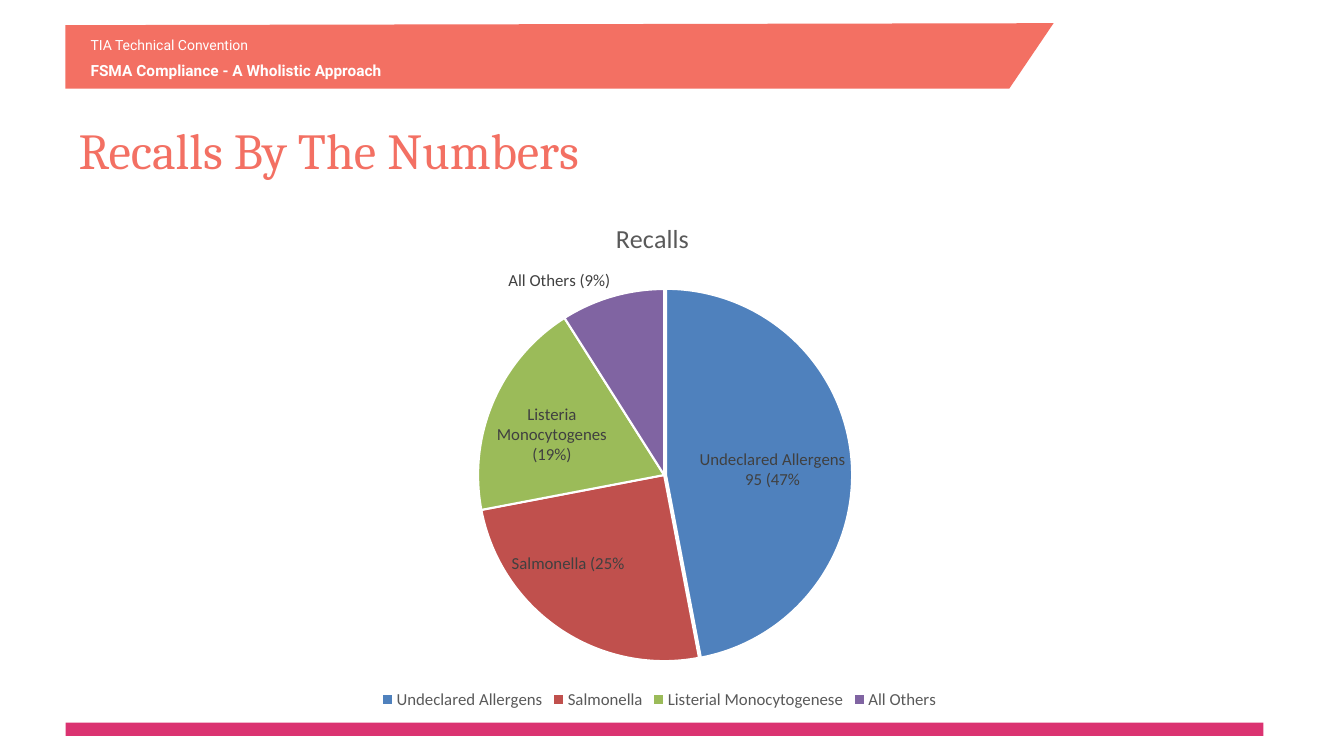
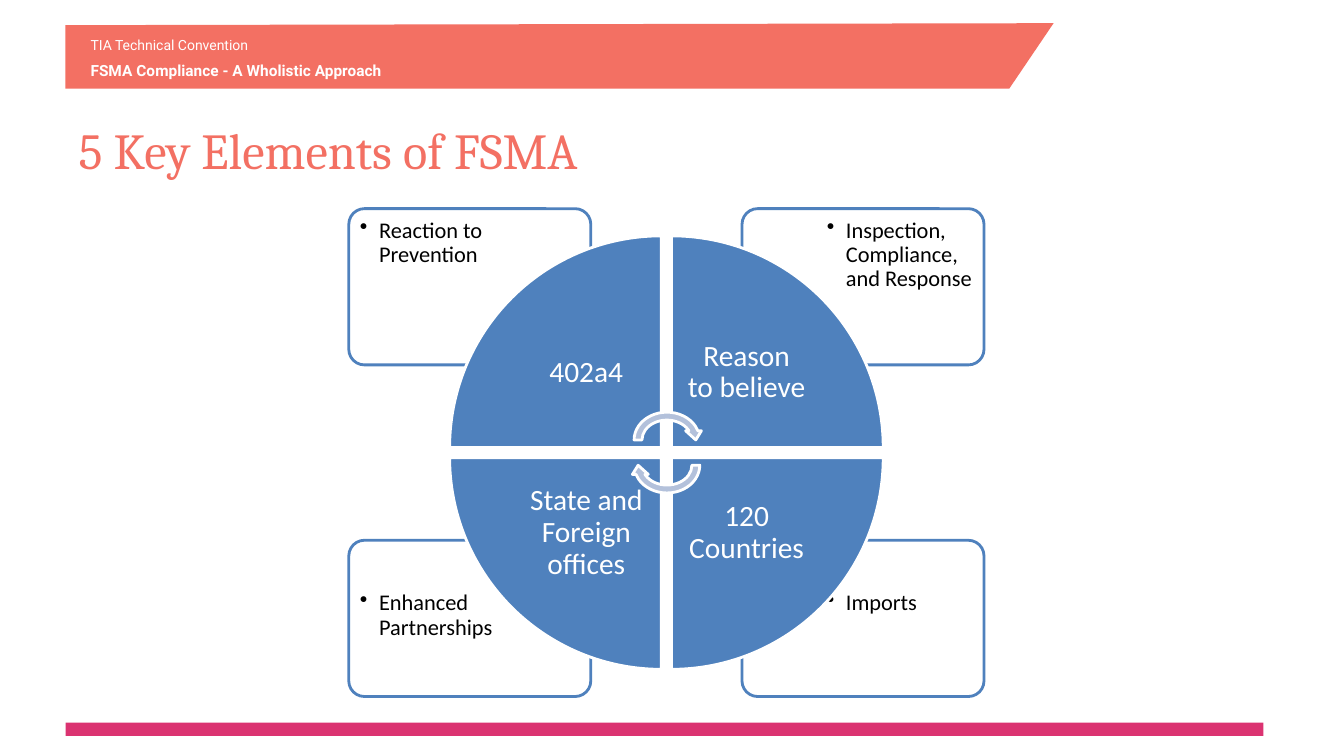
from lxml import etree
from pptx import Presentation
from pptx.chart.data import CategoryChartData
from pptx.dml.color import RGBColor
from pptx.enum.chart import XL_CHART_TYPE, XL_LABEL_POSITION, XL_LEGEND_POSITION
from pptx.enum.shapes import MSO_SHAPE
from pptx.enum.text import MSO_ANCHOR, PP_ALIGN
from pptx.oxml import parse_xml
from pptx.oxml.ns import nsdecls, qn
from pptx.util import Inches, Pt

COLORS = {
    "coral": "F37063", "magenta": "DB3371", "white": "FFFFFF", "black": "000000",
    "blue": "4F81BD", "red": "C0504D", "green": "9BBB59", "purple": "8064A2",
    "pale blue": "B3C1DB", "gray": "595959", "dark gray": "404040",
}


def rgb(name):
    return RGBColor.from_string(COLORS[name])


def set_font(font, size, color, face="Calibri", bold=False):
    font.size, font.name, font.bold = Pt(size), face, bold
    font.color.rgb = rgb(color)


def set_layout(parent, index, inner=False, **fractions):
    """Give a chart part a manual layout in fractions of the chart."""
    for old in parent.findall(qn("c:layout")):
        parent.remove(old)
    target = '<c:layoutTarget val="inner"/>' if inner else ""
    modes = "".join(f'<c:{k}Mode val="edge"/>' for k in "xy")
    values = "".join(f'<c:{k} val="{v}"/>' for k, v in fractions.items())
    parent.insert(index, parse_xml(
        f'<c:layout {nsdecls("c")}><c:manualLayout>{target}{modes}{values}'
        '</c:manualLayout></c:layout>'))


class Deck:
    def __init__(self):
        self.prs = Presentation()
        self.prs.slide_width, self.prs.slide_height = Inches(13.33), Inches(7.5)
        self.slide = None

    def new_slide(self, heading):
        self.slide = self.prs.slides.add_slide(self.prs.slide_layouts[5])
        self.frame()
        title = self.slide.shapes.title
        title.left, title.top = Inches(0.68), Inches(1.08)
        title.width, title.height = Inches(11.82), Inches(0.8)
        title.text_frame.text = heading
        title.text_frame.vertical_anchor = MSO_ANCHOR.MIDDLE
        paragraph = title.text_frame.paragraphs[0]
        paragraph.alignment = PP_ALIGN.LEFT
        set_font(paragraph.font, 36, "coral", "Cambria")

    def frame(self):
        """Footer bar and header band shared by all slides."""
        self.shape(MSO_SHAPE.RECTANGLE, 0.65, 7.17, 11.88, 0.13, "magenta")
        outline = self.slide.shapes.build_freeform(Inches(0.65), Inches(0.25))
        corners = [(0.65, 0.88), (10.01, 0.88), (10.45, 0.23)]
        outline.add_line_segments([(Inches(x), Inches(y)) for x, y in corners])
        self.paint(outline.convert_to_shape(), "coral")
        event, topic = self.text(0.8, 0.31, 8.29, 0.54, [
            "TIA Technical Convention", "FSMA Compliance - A Wholistic Approach"])
        set_font(event.font, 10, "white", "Roboto")
        set_font(topic.font, 11, "white", "Roboto", bold=True)
        topic.space_before = Pt(6)

    def paint(self, shape, fill, line=None):
        shape.shadow.inherit = False
        shape.fill.solid()
        shape.fill.fore_color.rgb = rgb(fill)
        if line:
            shape.line.color.rgb = rgb(line)
            shape.line.width = Pt(2)
        else:
            shape.line.fill.background()

    def shape(self, kind, left, top, width, height, fill, line=None, rotation=0):
        shape = self.slide.shapes.add_shape(
            kind, Inches(left), Inches(top), Inches(width), Inches(height))
        self.paint(shape, fill, line)
        shape.rotation = rotation
        return shape

    def text(self, left, top, width, height, lines, inset=None, anchor=MSO_ANCHOR.TOP):
        """Add a wrapping text box and return its paragraphs."""
        frame = self.slide.shapes.add_textbox(
            Inches(left), Inches(top), Inches(width), Inches(height)).text_frame
        frame.word_wrap = True
        frame.vertical_anchor = anchor
        if inset is not None:
            frame.margin_left = frame.margin_right = Inches(inset)
            frame.margin_top = frame.margin_bottom = Inches(inset)
        frame.text = "\n".join(lines)
        return frame.paragraphs

    def bullet(self, left, top, width, height, words):
        paragraph = self.text(left, top, width, height, [words], inset=0.08)[0]
        properties = paragraph._p.get_or_add_pPr()
        properties.set("marL", str(Inches(0.19)))
        properties.set("indent", str(-Inches(0.19)))
        etree.SubElement(properties, qn("a:buChar")).set("char", "•")
        paragraph.line_spacing = 0.9
        set_font(paragraph.font, 16, "black")

    def caption(self, left, top, width, height, words):
        paragraph = self.text(left, top, width, height, [words], 0.16, MSO_ANCHOR.MIDDLE)[0]
        paragraph.alignment = PP_ALIGN.CENTER
        paragraph.line_spacing = 0.9
        set_font(paragraph.font, 21, "white")

    def pie(self, left, top, width, height, heading, slices):
        """Add a pie; slices hold category, value, label and colour."""
        data = CategoryChartData()
        data.categories = [category for category, *_ in slices]
        data.add_series("Series 1", [value for _, value, *_ in slices])
        chart = self.slide.shapes.add_chart(
            XL_CHART_TYPE.PIE, Inches(left), Inches(top),
            Inches(width), Inches(height), data).chart
        set_font(chart.font, 10, "black")

        # Title, legend and plot position
        chart.has_title = True
        chart.chart_title.text_frame.text = heading
        set_font(chart.chart_title.text_frame.paragraphs[0].font, 18.6, "gray")
        set_layout(chart.chart_title._element, 1, x=0.45, y=0.05)
        chart.has_legend = True
        chart.legend.position = XL_LEGEND_POSITION.BOTTOM
        chart.legend.include_in_layout = False
        set_font(chart.legend.font, 12, "gray")
        set_layout(chart._chartSpace.find(".//" + qn("c:plotArea")), 0, inner=True,
                   x=0.31, y=0.19, w=0.39, h=0.71)

        # Slices and their labels
        plot = chart.plots[0]
        plot.vary_by_categories = True
        plot.has_data_labels = True
        plot.data_labels.show_value = True
        set_font(plot.data_labels.font, 12, "dark gray")
        for index, (_, _, label, color) in enumerate(slices):
            point = plot.series[0].points[index]
            point.format.fill.solid()
            point.format.fill.fore_color.rgb = rgb(color)
            point.format.line.color.rgb = rgb("white")
            point.format.line.width = Pt(1.5)
            point.data_label.text_frame.text = label
            run = point.data_label.text_frame.paragraphs[0].runs[0]
            set_font(run.font, 12, "dark gray")
            point.data_label.position = XL_LABEL_POSITION.BEST_FIT
        first = plot.series[0]._element.find(qn("c:dPt"))
        first.insert(1, parse_xml(f'<c:explosion {nsdecls("c")} val="1"/>'))


def recalls(deck):
    deck.new_slide("Recalls By The Numbers")
    deck.pie(1.75, 1.88, 9.58, 5.2, "Recalls", [
        ("Undeclared Allergens", 47, "Undeclared Allergens 95 (47%", "blue"),
        ("Salmonella", 25, "Salmonella (25%", "red"),
        ("Listerial Monocytogenese", 19, "Listeria Monocytogenes (19%)", "green"),
        ("All Others", 9, "All Others (9%)", "purple"),
    ])


def key_elements(deck):
    deck.new_slide("5 Key Elements of FSMA")
    center_x, center_y = 6.61, 4.49
    # Side of the centre (x, y), wedge rotation, wedge caption, corner bullet
    quadrants = [
        (-1, -1, 0, "402a4", "Reaction to Prevention"),
        (1, -1, 90, "Reason to believe", "Inspection, Compliance, and Response"),
        (1, 1, 180, "120 Countries", "Imports"),
        (-1, 1, 270, "State and Foreign offices", "Enhanced Partnerships"),
    ]

    def place(side_x, side_y, reach_x, reach_y, width, height):
        """Mirror a box about the centre, its far edge at the given reach."""
        left = center_x + (reach_x - width if side_x > 0 else -reach_x)
        top = center_y + (reach_y - height if side_y > 0 else -reach_y)
        return left, top, width, height

    # Corner cards
    for x, y, _, _, element in quadrants:
        card = deck.shape(MSO_SHAPE.ROUNDED_RECTANGLE,
                          *place(x, y, 3.15, 2.42, 2.4, 1.55), "white", "blue")
        card.adjustments[0] = 0.1
        deck.bullet(*place(x, y, 3.12, 2.4, 1.61, 1.1), element)

    # Wheel
    for x, y, rotation, words, _ in quadrants:
        deck.shape(MSO_SHAPE.PIE_WEDGE, *place(x, y, 2.15, 2.15, 2.1, 2.1),
                   "blue", "white", rotation)
        deck.caption(*place(x, y, 1.54, 1.54, 1.49, 1.49), words)

    # Cycle arrows
    for top, rotation in [(4.05, 0), (4.3, 180)]:
        deck.shape(MSO_SHAPE.CIRCULAR_ARROW, 6.25, top, 0.73, 0.63,
                   "pale blue", "white", rotation)


def main():
    deck = Deck()
    recalls(deck)
    key_elements(deck)
    deck.prs.save("out.pptx")


if __name__ == "__main__":
    main()
